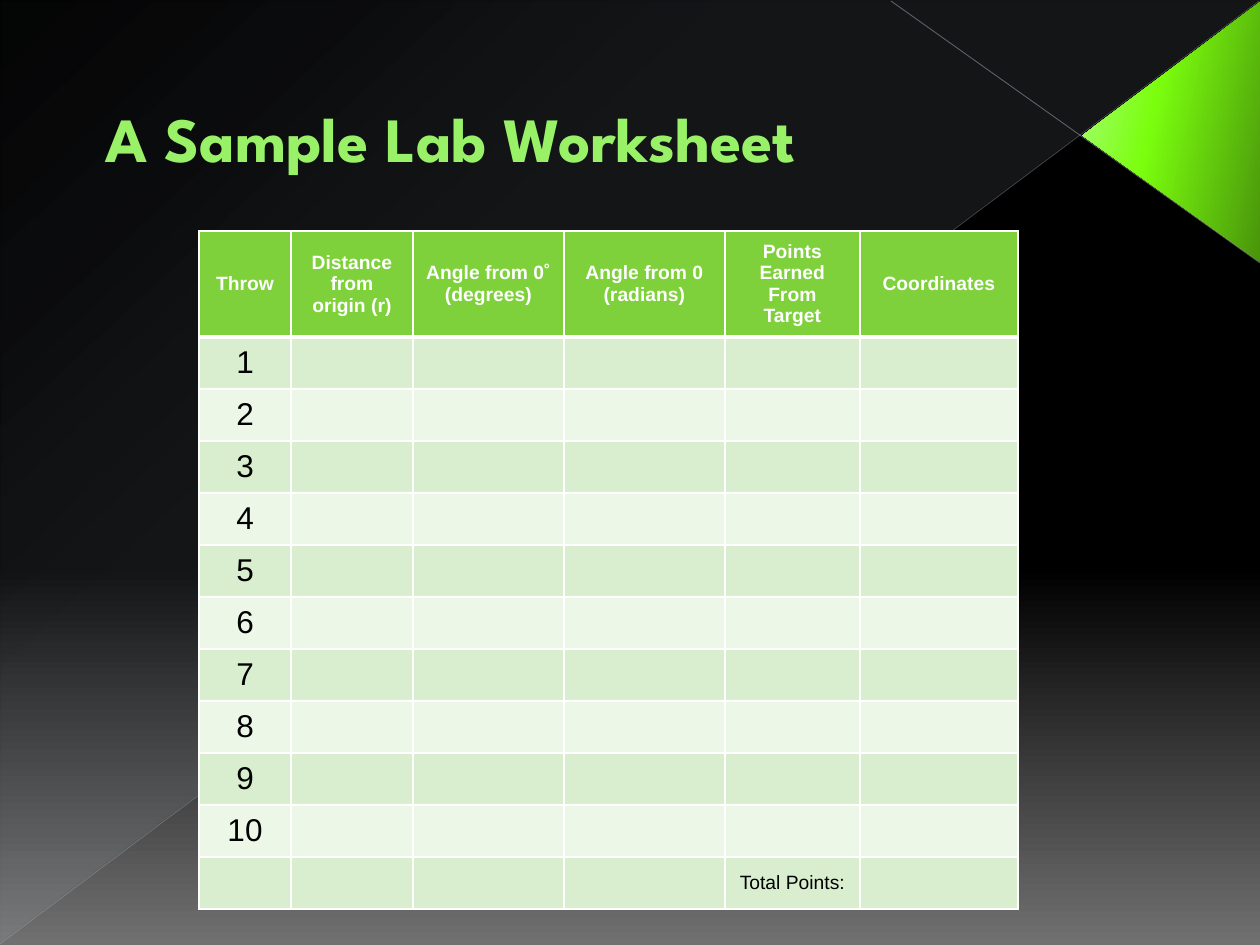
from pptx import Presentation
from pptx.dml.color import RGBColor
from pptx.enum.shapes import MSO_CONNECTOR, MSO_SHAPE
from pptx.enum.text import MSO_ANCHOR, PP_ALIGN
from pptx.oxml import parse_xml
from pptx.oxml.ns import nsdecls, qn
from pptx.util import Emu, Pt

COLORS = {
    "title": "98F167", "title_edge": "589129", "header": "7FD13B",
    "white": "FFFFFF", "black": "000000", "odd": "D8EECE", "even": "ECF7E8",
    "gray": "707070", "haze": "D6ECFF", "fall": "BFC3CB", "rise": "B7BCC5",
    "green_dark": "49940B", "green": "7BFE0E", "green_light": "A8FF7D",
}
TITLE = "A Sample Lab Worksheet"
HEADERS = [
    ["Throw"], ["Distance from origin (r)"], ["Angle from 0˚", "(degrees)"],
    ["Angle from 0 (radians)"], ["Points Earned From Target"], ["Coordinates"],
]
THROWS = 10
TOTAL_LABEL, TOTAL_COLUMN = "Total Points:", 4
COLUMN_WIDTHS = [92, 122, 151, 161, 135, 158]
HEADER_HEIGHT, ROW_HEIGHT = 106, 52
TABLE_LEFT, TABLE_TOP = 199, 231

BACKGROUND = ([(0, "black", 100), (60, "black", 100), (100, "gray", 100)], 90)
HAZE = ([(0, "haze", 10), (70, "haze", 8), (100, "haze", 1)], 133)
WEDGE = ([(0, "green_dark", 100), (60, "green", 100), (100, "green_light", 100)], 258)
TRIANGLES = [
    (MSO_SHAPE.RIGHT_TRIANGLE, (1, 1, 1259, 942), 0, None, HAZE),
    (MSO_SHAPE.ISOSCELES_TRIANGLE, (1041, 43, 261, 178), 90, 0.513, WEDGE),
]
LINES = [
    ((1260, 263, 891, 1), "fall", 0.47, 45),
    ((0, 944, 1259, 1), "rise", 0.39, 35),
]


def px(*lengths):
    return [Emu(round(length * 914400 / 126)) for length in lengths]


def rgb(name):
    return RGBColor.from_string(COLORS[name])


def color_xml(name, alpha=100):
    return f'<a:srgbClr val="{COLORS[name]}"><a:alpha val="{alpha * 1000}"/></a:srgbClr>'


def line_xml(tag, name, width):
    return parse_xml(
        f'<a:{tag} {nsdecls("a")} w="{Pt(width)}"><a:solidFill>'
        f'{color_xml(name)}</a:solidFill></a:{tag}>')


def set_gradient(fill, properties, gradient):
    stops, angle = gradient
    stops_xml = "".join(
        f'<a:gs pos="{position * 1000}">{color_xml(name, alpha)}</a:gs>'
        for position, name, alpha in stops)
    fill.solid()
    properties.replace(properties.find(qn("a:solidFill")), parse_xml(
        f'<a:gradFill {nsdecls("a")} rotWithShape="1"><a:gsLst>{stops_xml}</a:gsLst>'
        f'<a:lin ang="{angle * 60000}" scaled="1"/></a:gradFill>'))


def add_triangle(page, kind, place, rotation, apex, gradient):
    shape = page.shapes.add_shape(kind, *px(*place))
    shape.shadow.inherit = False
    shape.rotation = rotation
    if apex is not None:
        shape.adjustments[0] = apex
    properties = shape.element.spPr
    properties.find(qn("a:xfrm")).set("flipV", "1")
    set_gradient(shape.fill, properties, gradient)
    shape.line.fill.background()


def add_line(page, ends, name, width, alpha):
    line = page.shapes.add_connector(MSO_CONNECTOR.STRAIGHT, *px(*ends))
    line.line.width = Pt(width)
    line.line.color.rgb = rgb(name)
    properties = line.element.spPr
    color = properties.find(".//" + qn("a:srgbClr"))
    color.append(parse_xml(f'<a:alpha {nsdecls("a")} val="{alpha * 1000}"/>'))
    properties.append(parse_xml(f'<a:effectLst {nsdecls("a")}/>'))


def add_span(para, text, font, size, color, bold):
    span = para.add_run()
    span.text = text
    span.font.name = font
    span.font.size = Pt(size)
    span.font.bold = bold
    span.font.color.rgb = rgb(color)
    return span


def add_title(page):
    title = page.shapes.title
    title.left, title.top, title.width, title.height = px(93, 43, 998, 188)
    title.element.getparent().append(title.element)
    frame = title.text_frame
    frame.word_wrap = True
    frame.vertical_anchor = MSO_ANCHOR.MIDDLE
    para = frame.paragraphs[0]
    para.alignment = PP_ALIGN.LEFT
    span = add_span(para, TITLE, "League Spartan", 36, "title", True)
    span.font._element.insert(0, line_xml("ln", "title_edge", 0.5))


def fill_cell(cell, row, lines, size):
    header = row == 0
    properties = cell._tc.get_or_add_tcPr()
    widths = {"lnL": 1, "lnR": 1, "lnT": 3 if row == 1 else 1, "lnB": 3 if header else 1}
    for tag, width in widths.items():
        properties.append(line_xml(tag, "white", width))
    cell.fill.solid()
    cell.fill.fore_color.rgb = rgb("header" if header else "odd" if row % 2 else "even")
    cell.vertical_anchor = MSO_ANCHOR.MIDDLE
    frame = cell.text_frame
    for index, text in enumerate(lines):
        para = frame.add_paragraph() if index else frame.paragraphs[0]
        para.alignment = PP_ALIGN.CENTER
        add_span(para, text, "Arial", size, "white" if header else "black", header)


def add_worksheet(page):
    heights = [HEADER_HEIGHT] + [ROW_HEIGHT] * (THROWS + 1)
    table = page.shapes.add_table(
        len(heights), len(HEADERS),
        *px(TABLE_LEFT, TABLE_TOP, sum(COLUMN_WIDTHS), sum(heights))).table
    for column, width in zip(table.columns, px(*COLUMN_WIDTHS)):
        column.width = width
    for row, height in zip(table.rows, px(*heights)):
        row.height = height
    texts = {(0, column): (lines, 11) for column, lines in enumerate(HEADERS)}
    texts.update({(throw, 0): ([str(throw)], 18) for throw in range(1, THROWS + 1)})
    texts[THROWS + 1, TOTAL_COLUMN] = ([TOTAL_LABEL], 11)
    for row in range(len(heights)):
        for column in range(len(HEADERS)):
            fill_cell(table.cell(row, column), row, *texts.get((row, column), ([], 11)))


def main():
    deck = Presentation()
    deck.slide_width, deck.slide_height = px(1260, 945)
    page = deck.slides.add_slide(deck.slide_layouts[5])
    fill = page.background.fill
    fill.solid()
    set_gradient(fill, page.element.find(".//" + qn("p:bgPr")), BACKGROUND)
    for triangle in TRIANGLES:
        add_triangle(page, *triangle)
    for line in LINES:
        add_line(page, *line)
    add_title(page)
    add_worksheet(page)
    deck.save("out.pptx")


if __name__ == "__main__":
    main()
